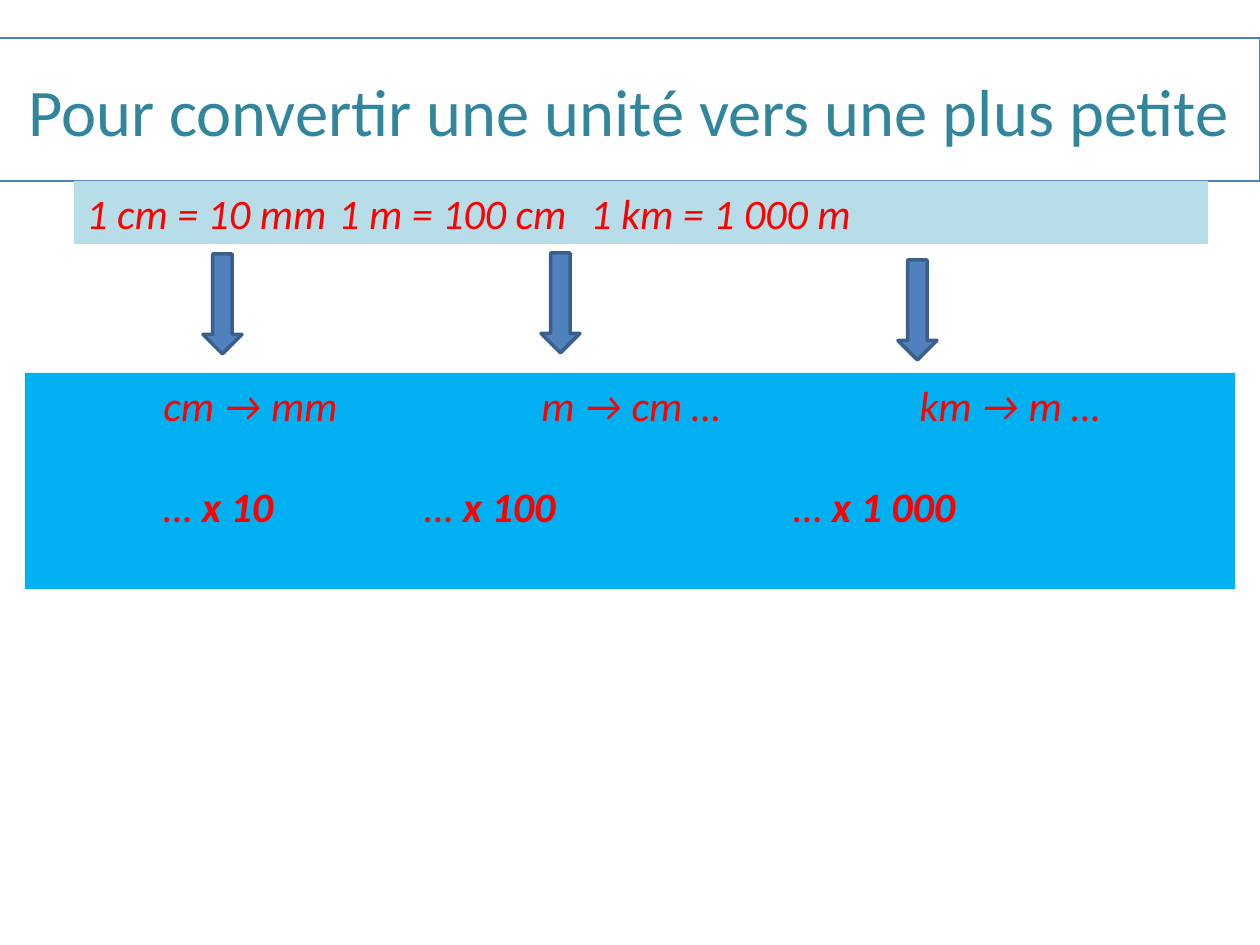
from dataclasses import dataclass

from lxml import etree
from pptx import Presentation
from pptx.dml.color import RGBColor
from pptx.enum.shapes import MSO_SHAPE
from pptx.enum.text import MSO_ANCHOR, MSO_AUTO_SIZE, PP_ALIGN
from pptx.oxml.ns import qn
from pptx.util import Emu, Pt

RECTANGLE, DOWN_ARROW = MSO_SHAPE.RECTANGLE, MSO_SHAPE.DOWN_ARROW
TOP, MIDDLE = MSO_ANCHOR.TOP, MSO_ANCHOR.MIDDLE
LEFT, CENTER = PP_ALIGN.LEFT, PP_ALIGN.CENTER
NO_AUTOFIT = MSO_AUTO_SIZE.NONE
TITLE_ONLY = 5
EMU_PER_PX = 914400 // 126


@dataclass(frozen=True)
class Theme:
    font: str = "Calibri"
    title_size: int = 38
    body_size: int = 24
    row_gap: int = 29
    title: str = "31859C"
    text: str = "FF0000"
    equalities: str = "B7DEE8"
    factors: str = "00B0F0"
    accent: str = "4F81BD"
    arrow_edge: str = "3A5F8C"


THEME = Theme()

TITLE = "Pour convertir une unité vers une plus petite"
EQUALITIES = ["1 cm = 10 mm", "1 m = 100 cm", "1 km = 1 000 m"]
CONVERSIONS = ["cm → mm", "m → cm …", "km → m …"]
FACTORS = ["x 10", "x 100", "x 1 000"]

TITLE_BOX = (-2, 38, 1262, 143)
EQUALITIES_BOX = (74, 181, 1134, 63)
FACTORS_BOX = (25, 373, 1210, 216)
EQUALITY_STOPS = [252, 504]
CONVERSION_STOPS = [126, 504, 882]
FACTOR_STOPS = [126, 387, 756]
ARROW_CORNERS = [(203, 254), (541, 253), (898, 260)]
ARROW_SIZE = (39, 100)


def px(length):
    return Emu(length * EMU_PER_PX)


def color(code):
    return RGBColor.from_string(code)


def paint(shape, fill, edge=None, width=0):
    shape.shadow.inherit = False
    shape.fill.solid()
    shape.fill.fore_color.rgb = color(fill)
    if edge:
        shape.line.color.rgb = color(edge)
        shape.line.width = Pt(width)
    else:
        shape.line.fill.background()


def add_run(paragraph, text, size, ink, italic=False, bold=False):
    run = paragraph.add_run()
    run.text = text
    run.font.name = THEME.font
    run.font.size = Pt(size)
    run.font.color.rgb = color(ink)
    run.font.italic = italic
    run.font.bold = bold


def add_row(paragraph, pieces, stops):
    paragraph.alignment = LEFT
    tabs = etree.SubElement(paragraph._p.get_or_add_pPr(), qn("a:tabLst"))
    for stop in stops:
        etree.SubElement(tabs, qn("a:tab"), pos=str(px(stop)), algn="l")
    for text, bold in pieces:
        add_run(paragraph, text, THEME.body_size, THEME.text, True, bold)


def add_panel(slide, box, fill):
    panel = slide.shapes.add_shape(RECTANGLE, *map(px, box))
    paint(panel, fill)
    panel.text_frame.word_wrap = True
    panel.text_frame.vertical_anchor = TOP
    return panel.text_frame


def add_title(slide):
    title = slide.shapes.title
    title.left, title.top, title.width, title.height = map(px, TITLE_BOX)
    title.line.color.rgb = color(THEME.accent)
    title.line.width = Pt(0.75)
    frame = title.text_frame
    frame.auto_size = NO_AUTOFIT
    frame.word_wrap = True
    frame.vertical_anchor = MIDDLE
    frame.paragraphs[0].alignment = CENTER
    add_run(frame.paragraphs[0], TITLE, THEME.title_size, THEME.title)


def main():
    deck = Presentation()
    deck.slide_width, deck.slide_height = px(1260), px(945)
    slide = deck.slides.add_slide(deck.slide_layouts[TITLE_ONLY])
    add_title(slide)

    equalities = add_panel(slide, EQUALITIES_BOX, THEME.equalities)
    add_row(equalities.paragraphs[0], [("\t".join(EQUALITIES), False)], EQUALITY_STOPS)

    factors = add_panel(slide, FACTORS_BOX, THEME.factors)
    conversions = [("\t" + conversion, False) for conversion in CONVERSIONS]
    add_row(factors.paragraphs[0], conversions, CONVERSION_STOPS)
    factor_row = factors.add_paragraph()
    factor_row.space_before = Pt(THEME.row_gap)
    pieces = [piece for factor in FACTORS for piece in (("\t… ", False), (factor, True))]
    add_row(factor_row, pieces, FACTOR_STOPS)

    for corner in ARROW_CORNERS:
        arrow = slide.shapes.add_shape(DOWN_ARROW, *map(px, corner + ARROW_SIZE))
        paint(arrow, THEME.accent, THEME.arrow_edge, 2)

    deck.save("out.pptx")


if __name__ == "__main__":
    main()
